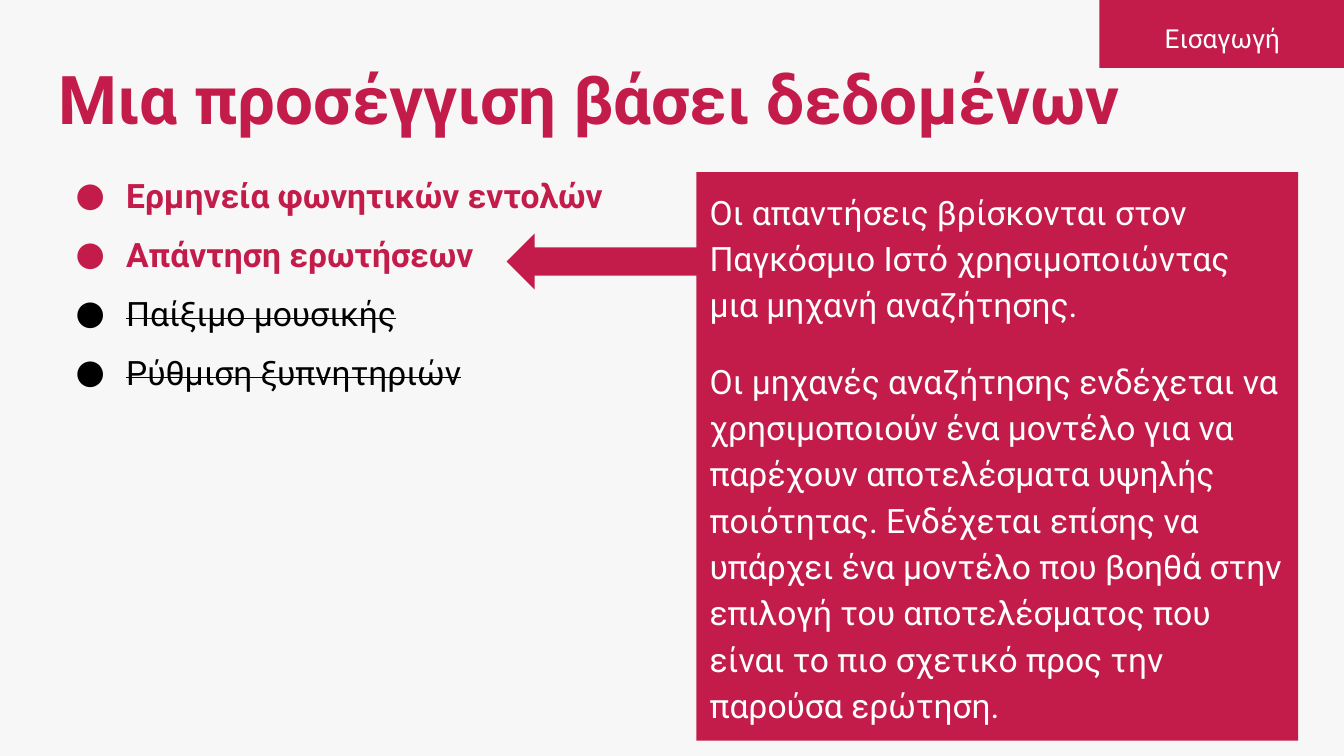
from lxml import etree
from pptx import Presentation
from pptx.dml.color import RGBColor
from pptx.enum.shapes import MSO_SHAPE as SHAPE
from pptx.enum.text import MSO_ANCHOR as ANCHOR, PP_ALIGN as ALIGN
from pptx.oxml.ns import qn
from pptx.util import Pt

FONT = "Roboto"
CRIMSON, WHITE, BLACK, PALE = "C31C4A", "FFFFFF", "000000", "F7F7F7"
INSET = 7.2

TASKS = [
    ("Ερμηνεία φωνητικών εντολών", True),
    ("Απάντηση ερωτήσεων", True),
    ("Παίξιμο μουσικής", False),
    ("Ρύθµιση ξυπνητηριών", False),
]
ANSWERS = [
    "Οι απαντήσεις βρίσκονται στον Παγκόσμιο Ιστό χρησιμοποιώντας "
    "μια μηχανή αναζήτησης.",
    "Οι μηχανές αναζήτησης ενδέχεται να χρησιμοποιούν ένα μοντέλο για να "
    "παρέχουν αποτελέσματα υψηλής ποιότητας. Ενδέχεται επίσης να υπάρχει "
    "ένα μοντέλο που βοηθά στην επιλογή του αποτελέσματος που είναι το πιο "
    "σχετικό προς την παρούσα ερώτηση.",
]


def rgb(color):
    return RGBColor.from_string(color)


def add_block(slide, kind, box):
    sp = slide.shapes.add_shape(kind, *map(Pt, box))
    sp.shadow.inherit = False
    sp.fill.solid()
    sp.fill.fore_color.rgb = rgb(CRIMSON)
    sp.line.fill.background()
    return sp


def add_text_box(slide, box):
    return slide.shapes.add_textbox(*map(Pt, box))


def prepare_frame(sp, anchor=ANCHOR.TOP):
    tf = sp.text_frame
    tf.word_wrap = True
    tf.vertical_anchor = anchor
    tf.margin_left = tf.margin_right = Pt(INSET)
    tf.margin_top = tf.margin_bottom = Pt(INSET)
    return tf


def add_paragraph(tf, first, align=ALIGN.LEFT, spacing=1.0, before=0):
    p = tf.paragraphs[0] if first else tf.add_paragraph()
    p.alignment = align
    p.line_spacing = spacing
    p.space_before = Pt(before)
    return p


def add_run(p, text, size, color, bold=False):
    r = p.add_run()
    r.text = text
    r.font.name = FONT
    r.font.size = Pt(size)
    r.font.bold = bold
    r.font.color.rgb = rgb(color)
    return r


def add_bullet(p, color):
    pPr = p._p.get_or_add_pPr()
    pPr.set("marL", str(Pt(36)))
    pPr.set("indent", str(Pt(-27)))
    clr = etree.SubElement(pPr, qn("a:buClr"))
    etree.SubElement(clr, qn("a:srgbClr")).set("val", color)
    etree.SubElement(pPr, qn("a:buFont")).set("typeface", FONT)
    etree.SubElement(pPr, qn("a:buChar")).set("char", "●")


def add_section_tab(slide, box):
    left, top, width, height = box
    add_block(slide, SHAPE.RECTANGLE, box)
    tf = prepare_frame(add_text_box(
        slide, (left + 5, top + 2.2, width - 9.3, height - 6.5)))
    p = add_paragraph(tf, True, ALIGN.CENTER, 1.15)
    add_run(p, "Εισαγωγή", 14, WHITE)


def add_title(slide, box):
    tf = prepare_frame(add_text_box(slide, box), ANCHOR.MIDDLE)
    p = add_paragraph(tf, True)
    add_run(p, "Μια προσέγγιση βάσει δεδομένων", 36, CRIMSON, True)


def add_task_list(slide, box):
    """Lists the tasks: active ones bold, the others struck through."""
    tf = prepare_frame(add_text_box(slide, box))
    for i, (task, active) in enumerate(TASKS):
        color = CRIMSON if active else BLACK
        p = add_paragraph(tf, i == 0, before=10 if i else 0)
        add_bullet(p, color)
        r = add_run(p, task, 18, color, active)
        if not active:
            r.font._element.set("strike", "sngStrike")


def add_answer_panel(slide, box):
    """Draws the panel and the arrow from its left edge to the list."""
    left, top = box[:2]
    tf = prepare_frame(add_block(slide, SHAPE.RECTANGLE, box))
    for i, text in enumerate(ANSWERS):
        p = add_paragraph(tf, i == 0, spacing=1.15, before=16 if i else 0)
        add_run(p, text, 18, WHITE)
    add_block(slide, SHAPE.LEFT_ARROW, (left - 101.6, top + 32.8, 107.3, 30.2))


def main():
    prs = Presentation()
    prs.slide_width, prs.slide_height = Pt(720), Pt(405)
    s = prs.slides.add_slide(prs.slide_layouts[6])
    s.background.fill.solid()
    s.background.fill.fore_color.rgb = rgb(PALE)
    add_section_tab(s, (589, 0, 131, 36.4))
    add_title(s, (24.5, 25.2, 671, 54.7))
    add_task_list(s, (24.5, 86.4, 342, 288))
    add_answer_panel(s, (373, 92.2, 322.5, 304.6))
    prs.save("out.pptx")


if __name__ == "__main__":
    main()
